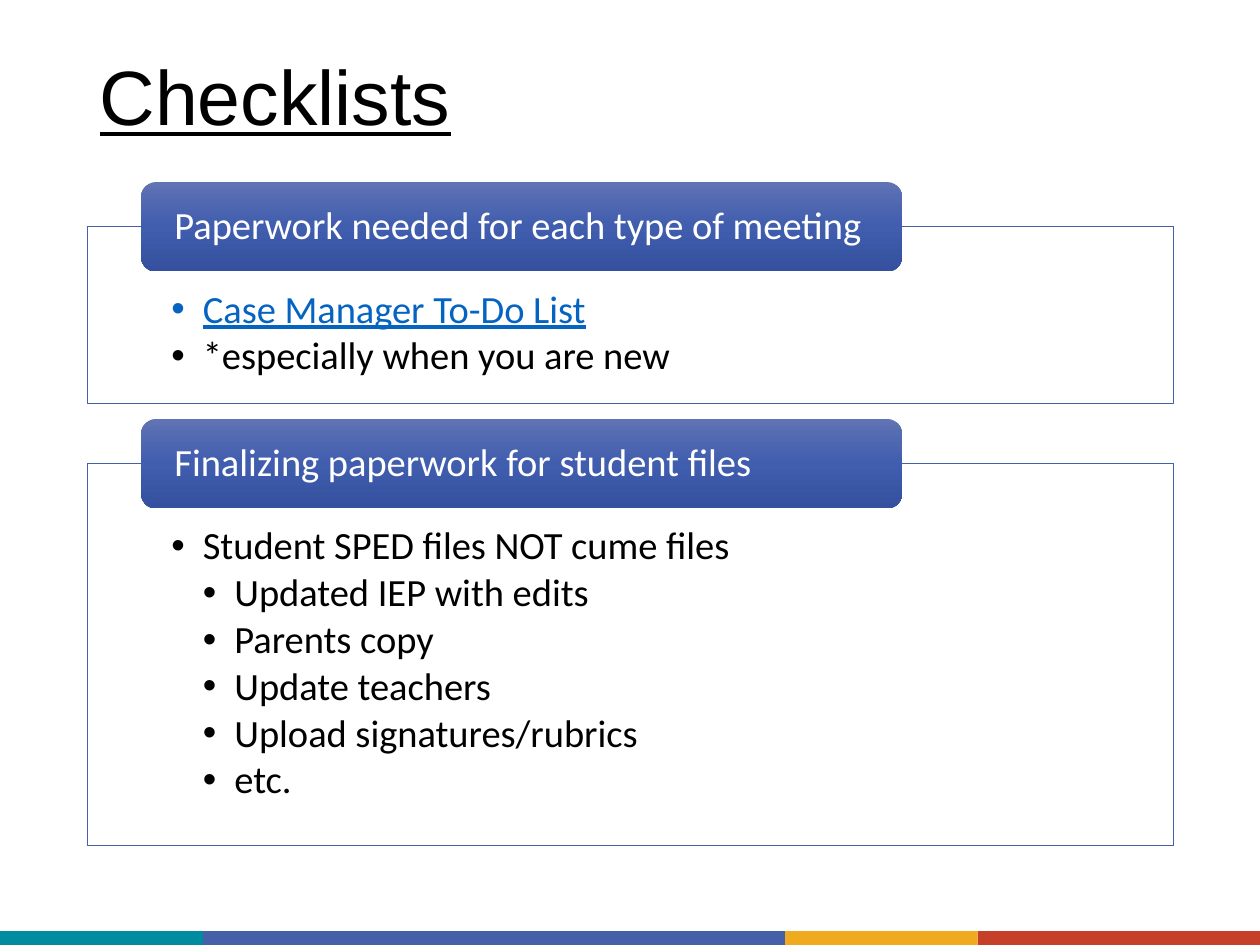
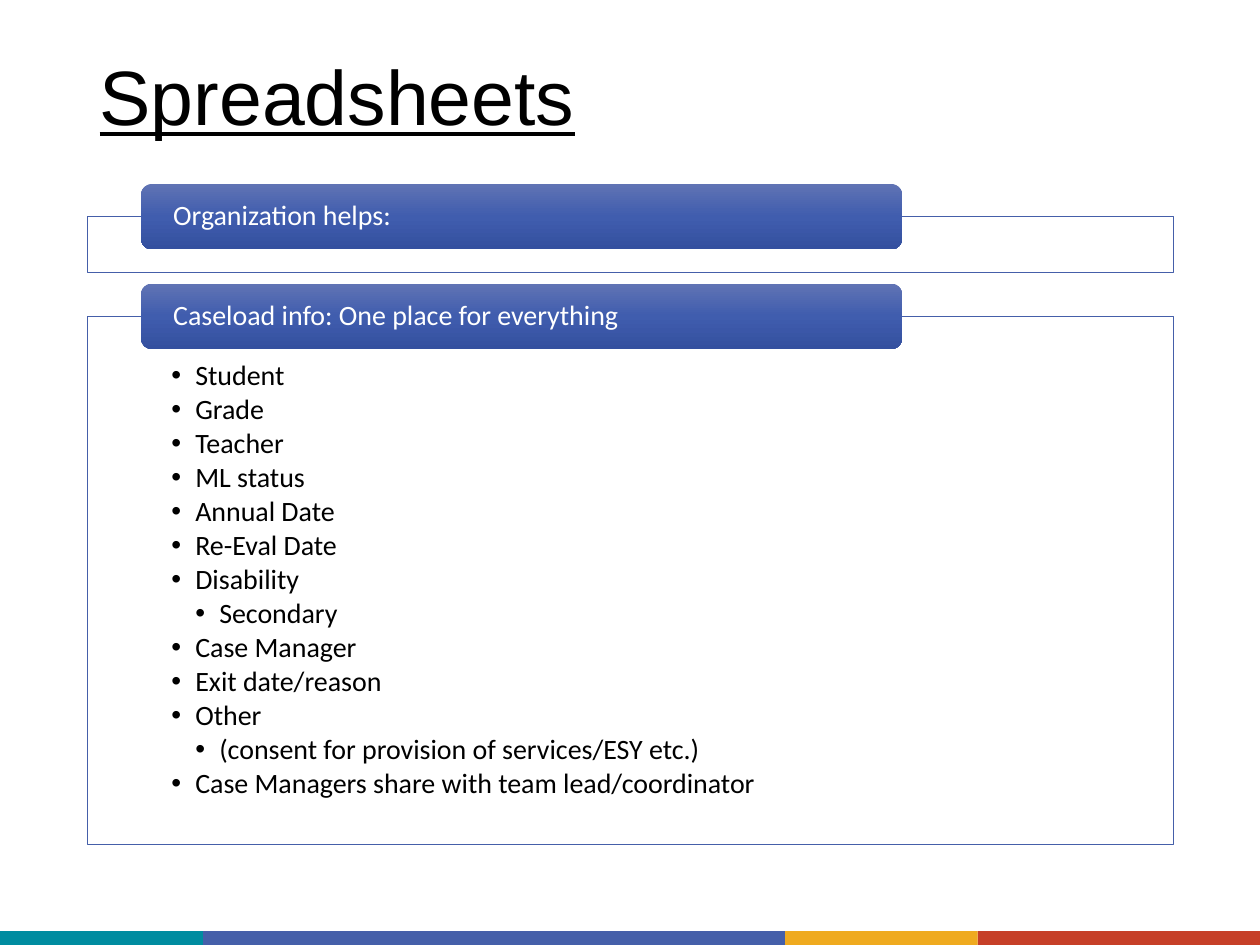
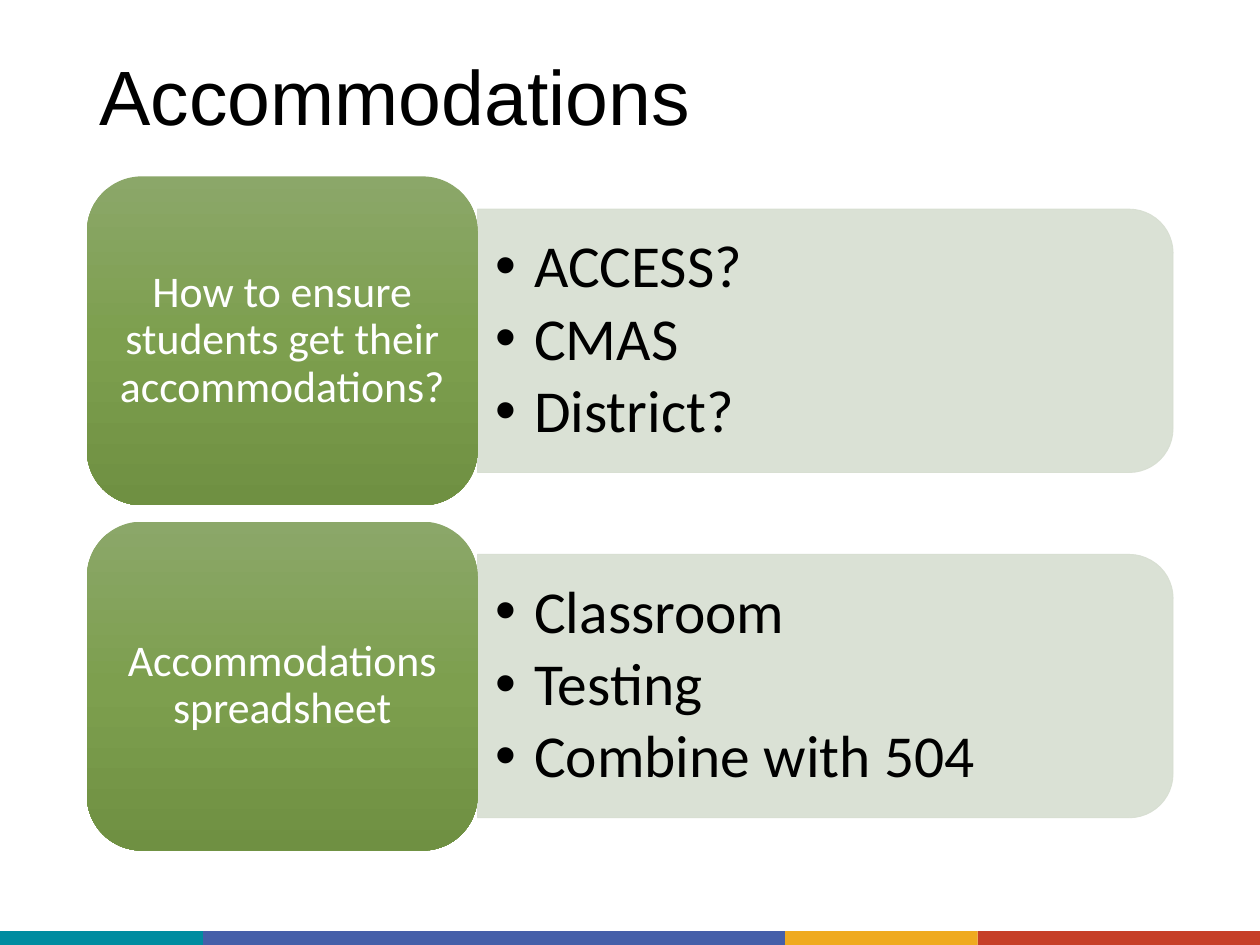
from copy import deepcopy
from dataclasses import dataclass

from lxml.etree import SubElement
from pptx import Presentation
from pptx.dml.color import RGBColor
from pptx.enum.shapes import MSO_SHAPE
from pptx.enum.text import MSO_ANCHOR, MSO_AUTO_SIZE, PP_ALIGN
from pptx.oxml.ns import qn
from pptx.util import Inches, Pt


@dataclass(frozen=True)
class Theme:
    title_font: str = "Arial"
    text_font: str = "Calibri"
    title_size: int = 44
    topic_size: int = 25
    topic_list_size: int = 34
    line_spacing: float = 0.9
    list_gap: float = 0.135  # share of the type size
    black: RGBColor = RGBColor.from_string("000000")
    white: RGBColor = RGBColor.from_string("FFFFFF")
    link: RGBColor = RGBColor.from_string("0563C1")
    blue: RGBColor = RGBColor.from_string("455FA9")
    sage: RGBColor = RGBColor.from_string("D7DED1")
    blue_gradient: tuple = ("6073B4", "405DAE", "34509F")
    green_gradient: tuple = ("8BA769", "7D9F4E", "6F9042")
    bands: tuple = (("008CA0", 1.61), ("455FA9", 4.62),
                    ("EFAA1F", 1.53), ("C63F28", 2.24))


THEME = Theme()


def write_list(holder, items, size, indent, insets, anchor):
    """Fill a body placeholder with bulleted (text, level, colour) items."""
    frame = holder.text_frame
    frame.word_wrap = True
    frame.auto_size = MSO_AUTO_SIZE.NONE
    frame.vertical_anchor = anchor
    frame.margin_left = frame.margin_right = Inches(insets[0])
    frame.margin_top, frame.margin_bottom = Inches(insets[1]), Inches(insets[2])
    for index, (text, level, color) in enumerate(items):
        paragraph = frame.add_paragraph() if index else frame.paragraphs[0]
        properties = paragraph._p.get_or_add_pPr()
        properties.set("marL", str(Inches(indent * level)))
        properties.set("indent", str(-Inches(indent)))
        SubElement(properties, qn("a:buFont"), typeface="Arial")
        SubElement(properties, qn("a:buChar"), char="•")
        paragraph.level = level
        paragraph.alignment = PP_ALIGN.LEFT
        paragraph.line_spacing = THEME.line_spacing
        paragraph.space_before = Pt(0)
        paragraph.space_after = Pt(size * THEME.list_gap)
        run = paragraph.add_run()
        run.text = text
        run.font.name, run.font.size = THEME.text_font, Pt(size)
        run.font.color.rgb = color
        run.font.underline = color == THEME.link


def add_label(slide, box, text, size, gradient, inset, alignment):
    """Add a rounded heading with a vertical three-colour gradient."""
    label = slide.shapes.add_shape(MSO_SHAPE.ROUNDED_RECTANGLE, *map(Inches, box))
    label.shadow.inherit = False
    label.line.fill.background()
    label.fill.gradient()
    label.fill.gradient_angle = 270
    stop_list = label.element.find(".//" + qn("a:gsLst"))
    stop_list.append(deepcopy(stop_list[-1]))
    for index, stop in enumerate(label.fill.gradient_stops):
        stop.position = index / 2
        stop.color.rgb = RGBColor.from_string(gradient[index])
    frame = label.text_frame
    frame.word_wrap = True
    frame.vertical_anchor = MSO_ANCHOR.MIDDLE
    frame.margin_left = frame.margin_right = Inches(inset)
    frame.margin_top = frame.margin_bottom = 0
    paragraph = frame.paragraphs[0]
    paragraph.alignment = alignment
    paragraph.line_spacing = THEME.line_spacing
    run = paragraph.add_run()
    run.text = text
    run.font.name, run.font.size = THEME.text_font, Pt(size)
    run.font.color.rgb = THEME.white


LEFT, WIDTH = 0.69, 8.62

deck = Presentation()
deck.slide_width, deck.slide_height = Inches(10), Inches(7.5)
one_list, two_lists = deck.slide_layouts[1], deck.slide_layouts[3]

# Slides and titles
slides = []
for heading, underlined, layout in (("Checklists", True, two_lists),
                                    ("Spreadsheets", True, one_list),
                                    ("Accommodations", False, two_lists)):
    slide = deck.slides.add_slide(layout)
    title = slide.shapes.title
    title.left, title.top, title.width, title.height = map(
        Inches, (LEFT, 0.4, WIDTH, 0.8))
    title.text_frame.auto_size = MSO_AUTO_SIZE.NONE
    title.text_frame.vertical_anchor = MSO_ANCHOR.MIDDLE
    paragraph = title.text_frame.paragraphs[0]
    paragraph.alignment = PP_ALIGN.LEFT
    paragraph.line_spacing = THEME.line_spacing
    run = paragraph.add_run()
    run.text = heading
    run.font.name, run.font.size = THEME.title_font, Pt(THEME.title_size)
    run.font.color.rgb = THEME.black
    run.font.underline = underlined
    slides.append(slide)
checklists, spreadsheets, accommodations = slides

# Footer bands, moved to the master so that every slide shows them
band_left = 0
for color, band_width in THEME.bands:
    band = checklists.shapes.add_shape(
        MSO_SHAPE.RECTANGLE, *map(Inches, (band_left, 7.39, band_width, 0.11)))
    band.shadow.inherit = False
    band.fill.solid()
    band.fill.fore_color.rgb = RGBColor.from_string(color)
    band.line.fill.background()
    deck.slide_master.shapes.element.insert(2, band.element)
    band_left += band_width

# Checklists and Spreadsheets: outlined cards with a heading on the top edge
paperwork = [("Case Manager To-Do List", 1, THEME.link),
             ("*especially when you are new", 1, THEME.black)]
student_files = [("Student SPED files NOT cume files", 1, THEME.black)] + [
    (text, 2, THEME.black)
    for text in ("Updated IEP with edits", "Parents copy", "Update teachers",
                 "Upload signatures/rubrics", "etc.")]
caseload = [(text, level, THEME.black) for text, level in (
    ("Student", 1), ("Grade", 1), ("Teacher", 1), ("ML status", 1),
    ("Annual Date", 1), ("Re-Eval Date", 1), ("Disability", 1),
    ("Secondary", 2), ("Case Manager", 1), ("Exit date/reason", 1),
    ("Other", 1), ("(consent for provision of services/ESY etc.)", 2),
    ("Case Managers share with team lead/coordinator", 1))]

# slide, type size, label height, list indent, list insets, cards
card_slides = (
    (checklists, 22, 0.71, 0.25, (0.67, 0.5, 0.17), (
        ("Paperwork needed for each type of meeting", 1.8, 1.4, paperwork),
        ("Finalizing paperwork for student files", 3.68, 3.03, student_files))),
    (spreadsheets, 16, 0.52, 0.19, (0.67, 0.36, 0.12), (
        ("Organization helps:", 1.72, 0.44, []),
        ("Caseload info: One place for everything", 2.51, 4.19, caseload))),
)
for slide, size, label_height, indent, insets, cards in card_slides:
    bodies = iter(list(slide.placeholders)[1:])
    for heading, top, height, items in cards:
        box = tuple(map(Inches, (LEFT, top, WIDTH, height)))
        if items:
            card = next(bodies)
            card.left, card.top, card.width, card.height = box
            write_list(card, items, size, indent, insets, MSO_ANCHOR.TOP)
        else:
            card = slide.shapes.add_shape(MSO_SHAPE.RECTANGLE, *box)
            card.shadow.inherit = False
        card.fill.solid()
        card.fill.fore_color.rgb = THEME.white
        card.line.color.rgb = THEME.blue
        card.line.width = Pt(0.5)
        add_label(slide, (1.12, top - label_height / 2, 6.04, label_height),
                  heading, size, THEME.blue_gradient, 0.23, PP_ALIGN.LEFT)

# Accommodations: a green topic beside a pale panel with its list
topics = (
    ("How to ensure students get their accommodations?",
     ("ACCESS?", "CMAS", "District?")),
    ("Accommodations spreadsheet",
     ("Classroom", "Testing", "Combine with 504")),
)
topic_width, topic_height, topic_pitch = 3.1, 2.61, 2.74
panel_left = LEFT + topic_width
panel_width, panel_height = WIDTH - topic_width, 2.09
bodies = list(accommodations.placeholders)[1:]
for row, ((heading, answers), body) in enumerate(zip(topics, bodies)):
    top = 1.4 + row * topic_pitch
    middle = top + topic_height / 2

    # The panel stands upright before its quarter turn
    panel = accommodations.shapes.add_shape(
        MSO_SHAPE.ROUND_2_SAME_RECTANGLE,
        Inches(panel_left + (panel_width - panel_height) / 2),
        Inches(middle - panel_width / 2),
        Inches(panel_height), Inches(panel_width))
    panel.rotation = 90
    panel.shadow.inherit = False
    panel.fill.solid()
    panel.fill.fore_color.rgb = panel.line.color.rgb = THEME.sage
    panel.line.width = Pt(0.5)
    for color in panel.element.spPr.iter(qn("a:srgbClr")):
        SubElement(color, qn("a:alpha"), val="90000")
    accommodations.shapes.element.insert(2, panel.element)

    body.left, body.top, body.width, body.height = map(
        Inches, (panel_left, middle - 0.94, 5.42, 1.88))
    write_list(body, [(text, 1, THEME.black) for text in answers],
               THEME.topic_list_size, 0.31, (0.14, 0.07, 0.07), MSO_ANCHOR.MIDDLE)
    add_label(accommodations, (LEFT, top, topic_width, topic_height), heading,
              THEME.topic_size, THEME.green_gradient, 0.1, PP_ALIGN.CENTER)

deck.save("out.pptx")
